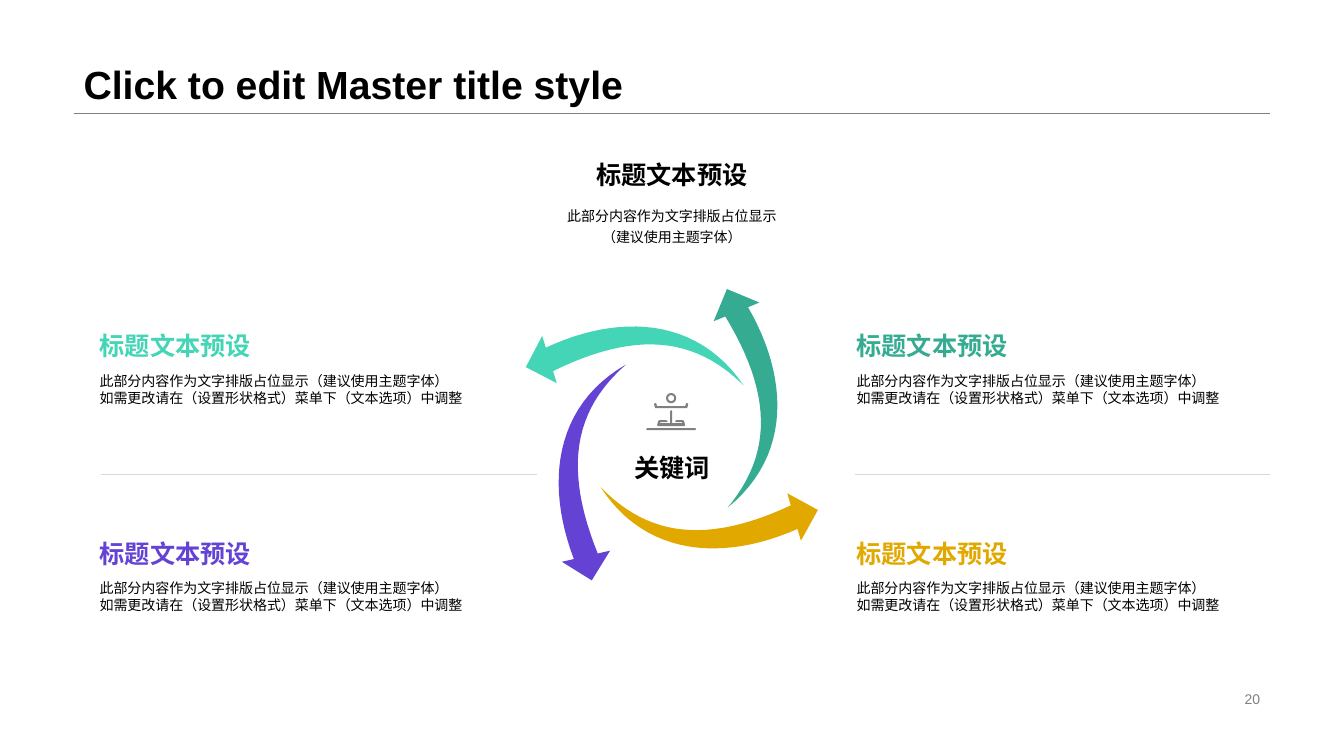
"""Build a slide with a swirl of four arrows and its captions."""
import dataclasses
import math

import lxml.etree
import pptx
import pptx.dml.color
import pptx.enum.shapes
import pptx.enum.text
import pptx.oxml.ns
import pptx.util

Pt = pptx.util.Pt
ALIGN = pptx.enum.text.PP_ALIGN
ANCHOR = pptx.enum.text.MSO_ANCHOR


@dataclasses.dataclass(frozen=True)
class Theme:
    font: str = "Arial"
    black: str = "000000"
    grey: str = "808080"
    pale: str = "D9D9D9"
    mint: str = "43D5B5"
    violet: str = "6342D4"
    gold: str = "E1A800"
    green: str = "35AC91"
    title: int = 28
    head: int = 18
    body: int = 10
    hair: float = 0.25


THEME = Theme()
HEAD = "标题文本预设"
BODY = ("此部分内容作为文字排版占位显示（建议使用主题字体）\n"
        "如需更改请在（设置形状格式）菜单下（文本选项）中调整")
ARROW = [(0, 127), (8.8, 127), (1, 70.8, 19.1, 17.4, 76.3, 0),
         (32.5, 23.4, 16.1, 62.4, 26.3, 127), (35.3, 127), (17.8, 144.7)]
SWIRL = [(412.6, 187.9, 72.8, THEME.mint), (388.1, 267.1, 347, THEME.violet),
         (470.9, 292.3, 254, THEME.gold), (489.6, 208.8, 157.8, THEME.green)]
QUADS = [(64.1, 232.6, THEME.mint), (64.1, 380.9, THEME.violet),
         (604.8, 232.6, THEME.green), (604.8, 380.9, THEME.gold)]
TRAY = [(8, 11), (9, 10), (10, 10), (11, 13), (39, 13), (40, 10), (41, 10),
        (42, 11), (41, 15), (9, 15)]
SEAT = [(14, 29), (14, 30), (24, 30), (24, 18), (25, 17), (26, 18), (26, 30),
        (36, 30), (36, 29), (30, 29), (29, 28), (30, 27), (37, 27), (38, 28),
        (39, 32), (38, 33), (12, 33), (11, 32), (12, 28), (13, 27), (20, 27),
        (22, 28), (20, 29)]
FLOOR = [(0, 36), (1, 35), (49, 35), (50, 36), (49, 37), (1, 37)]


def tint(hue):
    """Turn a hex string into a colour."""
    return pptx.dml.color.RGBColor.from_string(hue)


def text(slide, box, words, size, hue=THEME.black, bold=False,
         align=ALIGN.LEFT, anchor=ANCHOR.TOP, lead=None):
    """Add a text box; lead is the line spacing of its first paragraph."""
    frame = slide.shapes.add_textbox(*map(Pt, box)).text_frame
    frame.word_wrap = True
    frame.vertical_anchor = anchor
    frame.text = words
    frame.paragraphs[0].line_spacing = lead
    for para in frame.paragraphs:
        para.alignment = align
        for run in para.runs:
            run.font.name = THEME.font
            run.font.size = Pt(size)
            run.font.bold = bold
            run.font.color.rgb = tint(hue)


def rule(slide, left, right, top, hue):
    """Draw a level hairline."""
    line = slide.shapes.add_connector(
        pptx.enum.shapes.MSO_CONNECTOR.STRAIGHT,
        Pt(left), Pt(top), Pt(right), Pt(top))
    line.line.width = Pt(THEME.hair)
    line.line.color.rgb = tint(hue)
    lxml.etree.SubElement(line._element.spPr, pptx.oxml.ns.qn("a:effectLst"))


def trace(path, steps=24):
    """Turn corners and cubic curves into a list of points."""
    dots = []
    for part in path:
        if len(part) == 2:
            dots.append(part)
            continue
        knots = [dots[-1], part[:2], part[2:4], part[4:]]
        for step in range(1, steps + 1):
            t = step / steps
            mix = [math.comb(3, k) * t ** k * (1 - t) ** (3 - k)
                   for k in range(4)]
            dots.append(tuple(sum(m * knot[axis] for m, knot in zip(mix, knots))
                              for axis in (0, 1)))
    return dots


def ring(mid, span, sides=32):
    """Give the points of a circle around the middle."""
    turns = [math.tau * side / sides for side in range(sides)]
    return [(mid[0] + span * math.cos(turn), mid[1] + span * math.sin(turn))
            for turn in turns]


def blob(slide, left, top, loops, hue, unit=1):
    """Draw closed loops of points as one filled outline."""
    fine = [[(x * 100, y * 100) for x, y in loop] for loop in loops]
    pen = slide.shapes.build_freeform(*fine[0][0], scale=Pt(unit / 100))
    for spot, loop in enumerate(fine):
        if spot:
            pen.move_to(*loop[0])
        pen.add_line_segments(loop[1:], close=True)
    shape = pen.convert_to_shape(Pt(left), Pt(top))
    shape.shadow.inherit = False
    shape.fill.solid()
    shape.fill.fore_color.rgb = tint(hue)
    shape.line.fill.background()
    return shape


def main():
    """Build and save the slide."""
    deck = pptx.Presentation()
    deck.slide_width, deck.slide_height = Pt(960), Pt(540)
    slide = deck.slides.add_slide(deck.slide_layouts[6])

    rule(slide, 52.6, 907.2, 80.6, THEME.grey)
    text(slide, (52.6, 0, 854.6, 80.6), "Click to edit Master title style",
         THEME.title, bold=True, anchor=ANCHOR.BOTTOM, lead=0.9)
    text(slide, (678.2, 491, 229, 16.6), "20", THEME.body, THEME.grey,
         align=ALIGN.RIGHT, anchor=ANCHOR.MIDDLE)

    for left, top, turn, hue in SWIRL:
        blob(slide, left, top, [trace(ARROW)], hue).rotation = turn
    text(slide, (396.7, 319.7, 166.3, 32.4), "关键词", THEME.head, bold=True,
         align=ALIGN.CENTER)
    head = ring((25, 5), 5)
    hole = ring((25, 5), 3)[::-1]
    blob(slide, 461.5, 280.8, [head, hole, FLOOR, TRAY, SEAT], THEME.grey, 0.72)

    for left, top, hue in QUADS:
        text(slide, (left, top + 27.4, 290.9, 47.5), BODY, THEME.body, lead=1.2)
        text(slide, (left, top, 290.9, 27.4), HEAD, THEME.head, hue, True)
    for left, right in ((72, 383.8), (610.6, 907.2)):
        rule(slide, left, right, 338.4, THEME.pale)

    text(slide, (396.7, 142.6, 166.3, 43.9),
         "此部分内容作为文字排版占位显示\v（建议使用主题字体）",
         THEME.body, align=ALIGN.CENTER, lead=1.2)
    text(slide, (396.7, 110.2, 166.3, 32.4), HEAD, THEME.head, bold=True,
         align=ALIGN.CENTER)
    deck.save("out.pptx")


if __name__ == "__main__":
    main()
